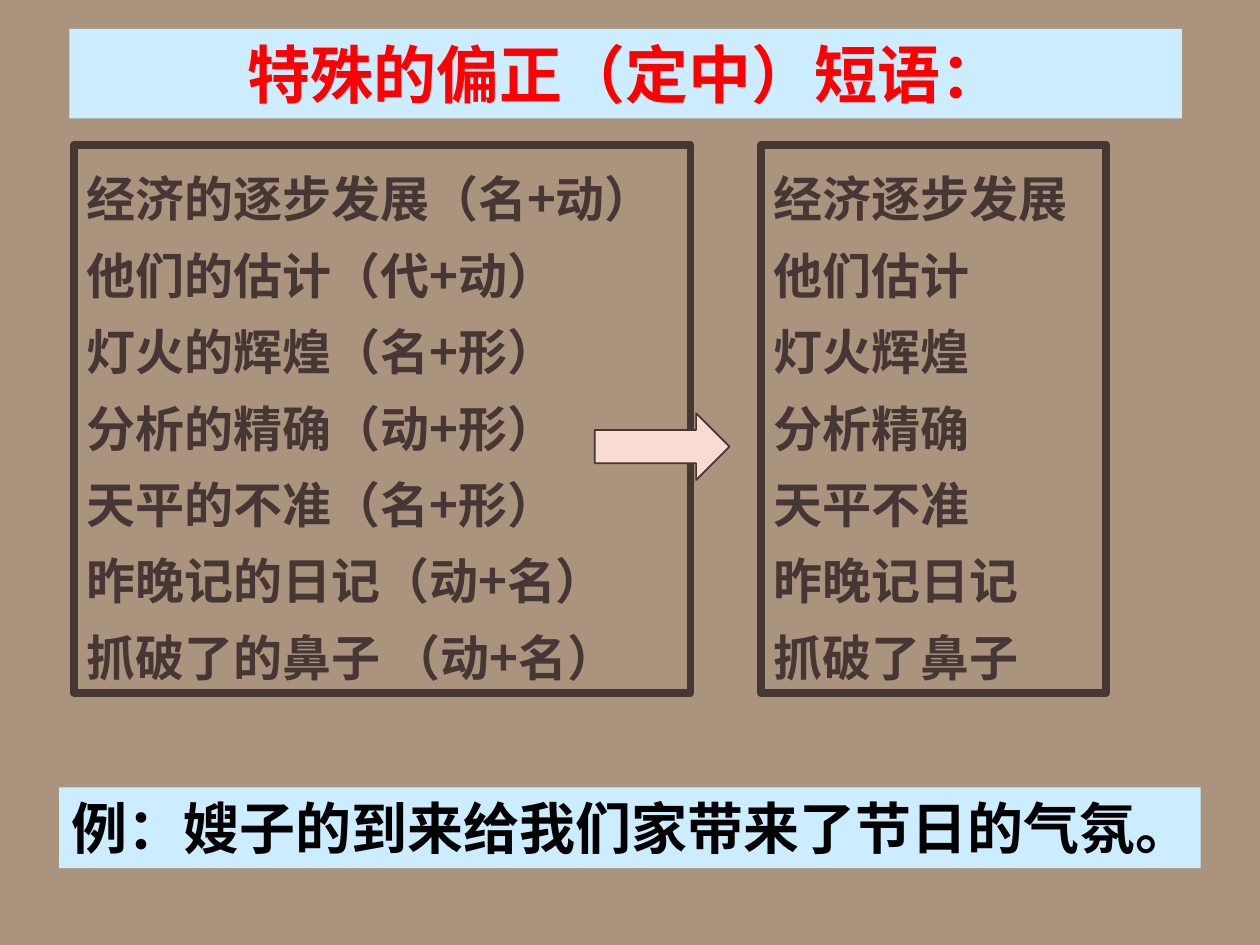
from pptx import Presentation
from pptx.dml.color import RGBColor
from pptx.enum.lang import MSO_LANGUAGE_ID
from pptx.enum.shapes import MSO_SHAPE
from pptx.enum.text import MSO_ANCHOR, MSO_AUTO_SIZE, PP_ALIGN
from pptx.util import Inches, Pt

LEFT, CENTER = PP_ALIGN.LEFT, PP_ALIGN.CENTER
TOP = MSO_ANCHOR.TOP
GROW = MSO_AUTO_SIZE.SHAPE_TO_FIT_TEXT
RECTANGLE, RIGHT_ARROW = MSO_SHAPE.RECTANGLE, MSO_SHAPE.RIGHT_ARROW
CHINESE = MSO_LANGUAGE_ID.SIMPLIFIED_CHINESE

TAN = RGBColor(0xAA, 0x94, 0x7E)
PALE_BLUE = RGBColor(0xCC, 0xEC, 0xFF)
BROWN = RGBColor(0x46, 0x36, 0x34)
PINK = RGBColor(0xF9, 0xDB, 0xD3)
RED = RGBColor(0xFF, 0, 0)
BLACK = RGBColor(0, 0, 0)

SERIF, SANS = "Times New Roman", "Noto Sans CJK SC"
LIST_TOP, LIST_HEIGHT = 1.15, 4.35

# Each phrase: words before 的, words after it, and its word classes
PHRASES = [
    ("经济", "逐步发展", "（名+动）"),
    ("他们", "估计", "（代+动）"),
    ("灯火", "辉煌", "（名+形）"),
    ("分析", "精确", "（动+形）"),
    ("天平", "不准", "（名+形）"),
    ("昨晚记", "日记", "（动+名）"),
    ("抓破了", "鼻子", " （动+名）"),
]


def add_block(page, kind, box, fill=None, line=None, width=0):
    shape = page.shapes.add_shape(kind, *(Inches(length) for length in box))
    shape.shadow.inherit = False
    if fill is None:
        shape.fill.background()
    else:
        shape.fill.solid()
        shape.fill.fore_color.rgb = fill
    if line is None:
        shape.line.fill.background()
    else:
        shape.line.color.rgb = line
        shape.line.width = Pt(width)
    return shape


def write_lines(shape, lines, size, font, color, align=LEFT, spacing=1.0, wrap=True):
    frame = shape.text_frame
    frame.word_wrap = wrap
    frame.auto_size = GROW
    frame.vertical_anchor = TOP
    for index, line in enumerate(lines):
        para = frame.add_paragraph() if index else frame.paragraphs[0]
        para.alignment = align
        para.line_spacing = spacing
        span = para.add_run()
        span.text = line
        span.font.name = font
        span.font.size = Pt(size)
        span.font.bold = True
        span.font.color.rgb = color
        span.font.language_id = CHINESE


def add_banner(page, box, text, size, color, align=LEFT):
    banner = add_block(page, RECTANGLE, box, fill=PALE_BLUE)
    write_lines(banner, [text], size, SERIF, color, align)


def add_phrase_list(page, box, lines):
    frame = add_block(page, RECTANGLE, box, line=BROWN, width=4.5)
    write_lines(frame, lines, 28, SANS, BROWN, spacing=1.3, wrap=False)


def build_slide(page):
    page.background.fill.solid()
    page.background.fill.fore_color.rgb = TAN

    # Title
    add_banner(page, (0.55, 0.23, 8.83, 0.71), "特殊的偏正（定中）短语：", 36, RED, CENTER)

    # Phrases with 的, an arrow, and the same phrases without it
    add_phrase_list(page, (0.59, LIST_TOP, 4.89, LIST_HEIGHT),
                    [f"{first}的{last}{classes}" for first, last, classes in PHRASES])
    add_block(page, RIGHT_ARROW, (4.72, 3.28, 1.07, 0.53), PINK, BROWN, 1)
    add_phrase_list(page, (6.04, LIST_TOP, 2.74, LIST_HEIGHT),
                    [first + last for first, last, _ in PHRASES])

    # Example sentence
    add_banner(page, (0.47, 6.25, 9.06, 0.64),
               "例：嫂子的到来给我们家带来了节日的气氛。", 32, BLACK)


def main():
    deck = Presentation()
    deck.slide_width, deck.slide_height = Inches(10), Inches(7.5)
    build_slide(deck.slides.add_slide(deck.slide_layouts[6]))
    deck.save("out.pptx")


if __name__ == "__main__":
    main()
